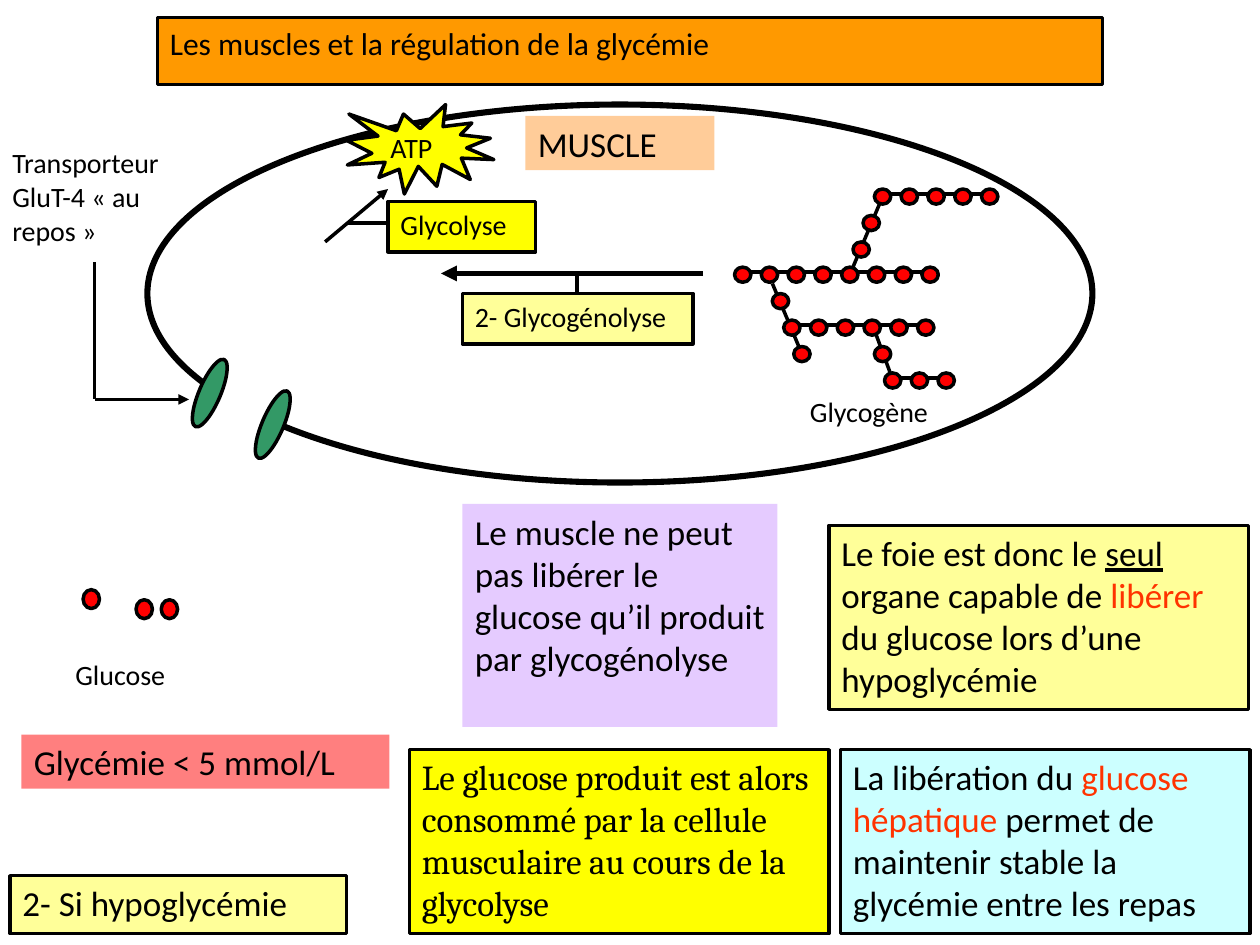
from dataclasses import dataclass

from lxml import etree
from pptx import Presentation
from pptx.dml.color import RGBColor
from pptx.enum.shapes import MSO_CONNECTOR, MSO_SHAPE
from pptx.enum.text import MSO_ANCHOR, PP_ALIGN
from pptx.oxml.ns import qn
from pptx.util import Inches, Pt

RECT = MSO_SHAPE.RECTANGLE
OVAL = MSO_SHAPE.OVAL
BURST = MSO_SHAPE.EXPLOSION1
STRAIGHT = MSO_CONNECTOR.STRAIGHT
TOP = MSO_ANCHOR.TOP
LEFT = PP_ALIGN.LEFT


@dataclass(frozen=True)
class Theme:
    ink: str = "000000"
    paper: str = "FFFFFF"
    accent: str = "FF3300"
    orange: str = "FF9900"
    peach: str = "FFCC99"
    cream: str = "FFFF99"
    yellow: str = "FFFF00"
    violet: str = "CC99FF"
    red: str = "FF0000"
    cyan: str = "CCFFFF"
    green: str = "339966"
    font: str = "Calibri"
    serif: str = "Cambria"
    title: int = 18
    body: int = 20
    label: int = 16
    thin: float = 2
    thick: float = 3
    membrane: float = 3.5


class Board:
    """Draws the elements of a diagram on one slide in a single style."""

    def __init__(self, page, theme):
        self.page = page
        self.theme = theme

    def paint(self, shape, fill, line, alpha=None):
        shape.shadow.inherit = False
        if fill:
            shape.fill.solid()
            shape.fill.fore_color.rgb = RGBColor.from_string(fill)
        else:
            shape.fill.background()
        if alpha:
            color = shape._element.spPr.find(qn("a:solidFill"))[0]
            etree.SubElement(color, qn("a:alpha")).set("val", str(alpha * 1000))
        if line:
            shape.line.color.rgb = RGBColor.from_string(self.theme.ink)
            shape.line.width = Pt(line)
        else:
            shape.line.fill.background()

    def shape(self, kind, left, top, width, height, fill,
              line=Theme.thin, alpha=None, turn=0):
        shape = self.page.shapes.add_shape(
            kind, Inches(left), Inches(top), Inches(width), Inches(height))
        self.paint(shape, fill, line, alpha)
        shape.rotation = turn
        return shape

    def add_spans(self, box, spans, size, font=None):
        frame = box.text_frame
        frame.word_wrap = True
        frame.vertical_anchor = TOP
        para = frame.paragraphs[0]
        para.alignment = LEFT
        for text, color, underline in spans:
            span = para.add_run()
            span.text = text
            span.font.name = font or self.theme.font
            span.font.size = Pt(size)
            span.font.color.rgb = RGBColor.from_string(color)
            if underline:
                span.font.underline = True

    def panel(self, place, fill, spans, size, line=Theme.thin, alpha=None, font=None):
        box = self.shape(RECT, *place, fill, line, alpha)
        self.add_spans(box, spans, size, font)

    def label(self, place, text):
        box = self.page.shapes.add_textbox(*(Inches(length) for length in place))
        self.add_spans(box, self.plain(text), self.theme.label)

    def plain(self, text):
        return [(text, self.theme.ink, False)]

    def line(self, start, end, width=Theme.thin, arrow=False):
        link = self.page.shapes.add_connector(
            STRAIGHT, *(Inches(length) for length in (*start, *end)))
        link.line.color.rgb = RGBColor.from_string(self.theme.ink)
        link.line.width = Pt(width)
        if arrow:
            outline = link._element.spPr.find(qn("a:ln"))
            etree.SubElement(outline, qn("a:tailEnd")).set("type", "triangle")
        etree.SubElement(link._element.spPr, qn("a:effectLst"))

    def patch(self, points):
        builder = self.page.shapes.build_freeform(
            Inches(points[0][0]), Inches(points[0][1]))
        builder.add_line_segments([(Inches(x), Inches(y)) for x, y in points[1:]])
        self.paint(builder.convert_to_shape(), self.theme.paper, None)

    def glycogen(self, rows, branches, stems):
        pitch, width, height = 0.2125, 0.13, 0.12
        for start, end in stems:
            self.line(start, end)
        beads = list(branches)
        for left, top, count in rows:
            spots = [left + pitch * index for index in range(count)]
            beads += [(spot, top) for spot in spots]
            for spot, following in zip(spots, spots[1:]):
                self.line((spot + width, top + 0.04), (following, top + 0.04))
        for left, top in beads:
            self.shape(OVAL, left, top, width, height, self.theme.red)


def main():
    theme = Theme()
    deck = Presentation()
    deck.slide_width, deck.slide_height = Inches(10), Inches(7.5)
    page = deck.slides.add_slide(deck.slide_layouts[6])
    board = Board(page, theme)
    plain = board.plain

    board.panel((1.25, 0.14, 7.5, 0.53), theme.orange,
                plain("Les muscles et la régulation de la glycémie"), theme.title)
    board.shape(OVAL, 1.17, 0.83, 7.5, 3, None, theme.membrane)
    board.panel((0.08, 6.95, 2.67, 0.46), theme.cream,
                plain("2- Si hypoglycémie"), theme.body)

    board.glycogen(
        rows=[(6.94, 1.5, 5), (5.83, 2.12, 8), (6.22, 2.54, 6), (7.02, 2.96, 3)],
        branches=[(6.85, 1.71), (6.77, 1.92), (6.13, 2.33), (6.3, 2.75), (6.94, 2.75)],
        stems=[((6.98, 1.62), (6.77, 2.12)), ((6.13, 2.25), (6.34, 2.75)),
               ((6.94, 2.62), (7.11, 3.08))])
    board.label((6.33, 3.08, 1.33, 0.37), "Glycogène")

    board.line((5.58, 2.17), (3.5, 2.17), theme.thick, arrow=True)
    board.line((4.58, 2.17), (4.58, 2.33))
    board.panel((3.67, 2.33, 1.83, 0.4), theme.cream,
                plain("2- Glycogénolyse"), theme.label)

    for left, top in [(0.66, 4.68), (1.08, 4.76), (1.28, 4.76)]:
        board.shape(OVAL, left, top, 0.13, 0.15, theme.red)
    board.label((0.5, 5.17, 1.17, 0.37), "Glucose")

    board.panel((3.67, 4, 2.5, 1.77), theme.violet,
                plain("Le muscle ne peut pas libérer le glucose qu’il produit "
                      "par glycogénolyse"), theme.body, line=None, alpha=50)
    board.panel((0.17, 5.83, 2.92, 0.43), theme.red,
                plain("Glycémie < 5 mmol/L"), theme.body, line=None, alpha=50)
    board.panel((6.58, 4.17, 3.33, 1.46), theme.cream, [
        ("Le foie est donc le ", theme.ink, False),
        ("seul", theme.ink, True),
        (" organe capable de ", theme.ink, False),
        ("libérer", theme.accent, False),
        (" du glucose lors d’une hypoglycémie", theme.ink, False)], theme.body)
    board.panel((6.67, 5.95, 3.25, 1.46), theme.cyan, [
        ("La libération du ", theme.ink, False),
        ("glucose hépatique", theme.accent, False),
        (" permet de maintenir stable la glycémie entre les repas", theme.ink, False)],
        theme.body)
    board.panel((3.25, 5.95, 3.33, 1.46), theme.yellow,
                plain("Le glucose produit est alors consommé par la cellule "
                      "musculaire au cours de la glycolyse"),
                theme.body, font=theme.serif)
    board.panel((4.17, 0.92, 1.5, 0.43), theme.peach, plain("MUSCLE"),
                theme.body, line=None)

    board.line((2.58, 1.92), (3.08, 1.5), arrow=True)
    board.line((2.75, 1.77), (3.08, 1.77))
    board.panel((3.08, 1.6, 1.17, 0.4), theme.yellow, plain("Glycolyse"), theme.label)
    board.shape(BURST, 2.75, 0.83, 1.17, 0.71, theme.yellow)
    board.label((3, 0.99, 0.67, 0.37), "ATP")

    board.label((0, 1.11, 1.5, 0.9), "Transporteur GluT-4 « au repos »")
    board.line((0.75, 2.08), (0.75, 3.17))
    board.line((0.75, 3.17), (1.5, 3.17), arrow=True)

    board.patch([(1.76, 3.08), (1.88, 3.1), (2.04, 3.19), (2.14, 3.28), (2.16, 3.38),
                 (2.1, 3.42), (1.89, 3.36), (1.76, 3.26), (1.7, 3.18), (1.72, 3.1)])
    for left, top in [(2.08, 3.08), (1.58, 2.83)]:
        board.shape(OVAL, left, top, 0.17, 0.58, theme.green, turn=23.1)

    deck.save("out.pptx")


if __name__ == "__main__":
    main()
